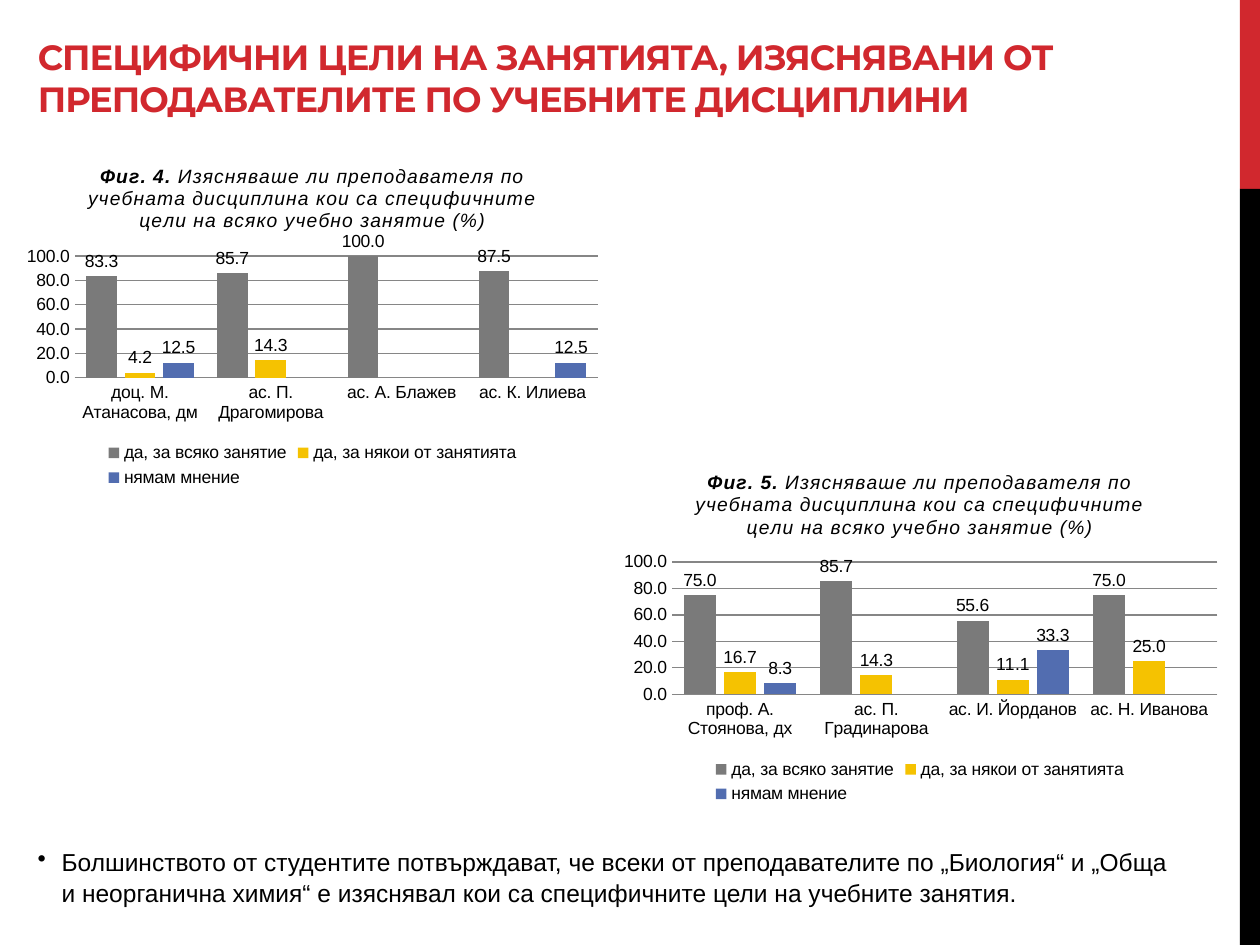
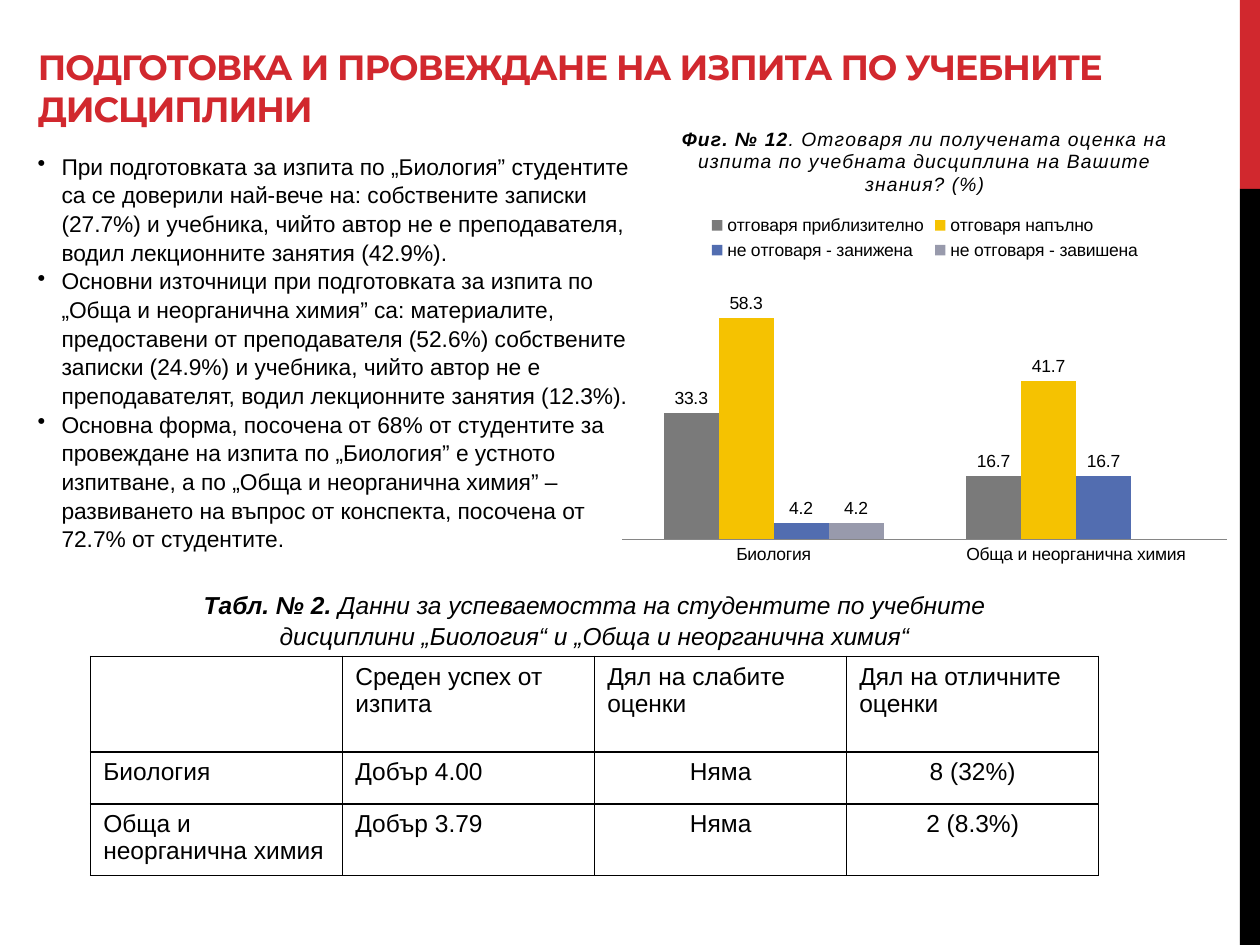
import lxml.etree
import pptx
import pptx.chart.data
import pptx.dml.color
import pptx.enum.chart
import pptx.enum.shapes
import pptx.enum.text
import pptx.oxml
import pptx.oxml.ns
import pptx.util
from pptx.util import Inches, Pt

RED, BLACK, GRID = "D1282E", "000000", "868686"
SERIES_COLOURS = ["7A7A7A", "F5C201", "526DB0", "989AAC"]
BODY_FONT, TITLE_FONT = "Arial", "Montserrat"
NUMBER_FORMAT = "0.0;[Red]0.0"
ALIGN = pptx.enum.text.PP_ALIGN
qn = pptx.oxml.ns.qn


def colour(hex_string):
    return pptx.dml.color.RGBColor.from_string(hex_string)


def add_run(paragraph, text, size, font=BODY_FONT, fill=BLACK, bold=False, italic=False, spacing=0):
    run = paragraph.add_run()
    run.text = text
    run.font.size, run.font.name = Pt(size), font
    run.font.bold, run.font.italic = bold, italic
    run.font.color.rgb = colour(fill)
    if spacing:
        run._r.get_or_add_rPr().set("spc", str(int(spacing * 100)))


presentation = pptx.Presentation()
presentation.slide_width, presentation.slide_height = Inches(10), Inches(7.5)

# Slides: side bands, title and bulleted text
pages = [
    {
        "title": "СПЕЦИФИЧНИ ЦЕЛИ НА ЗАНЯТИЯТА, ИЗЯСНЯВАНИ ОТ ПРЕПОДАВАТЕЛИТЕ ПО УЧЕБНИТЕ ДИСЦИПЛИНИ",
        "title_box": (0.2, 0.21, 9.53, 0.79),
        "body_box": (0.2, 6.66, 9.29, 0.63),
        "size": 14,
        "bullets": [
            "Болшинството от студентите потвърждават, че всеки от преподавателите по „Биология“ "
            "и „Обща и неорганична химия“ е изяснявал кои са специфичните цели на учебните занятия.",
        ],
    },
    {
        "title": "ПОДГОТОВКА И ПРОВЕЖДАНЕ НА ИЗПИТА ПО УЧЕБНИТЕ ДИСЦИПЛИНИ",
        "title_box": (0.2, 0.21, 9.61, 0.87),
        "body_box": (0.2, 1.15, 4.96, 3.39),
        "size": 13,
        "bullets": [
            "При подготовката за изпита по „Биология” студентите са се доверили най-вече на: "
            "собствените записки (27.7%) и учебника, чийто автор не е преподавателя, "
            "водил лекционните занятия (42.9%).",
            "Основни източници при подготовката за изпита по „Обща и неорганична химия” са: "
            "материалите, предоставени от преподавателя (52.6%) собствените записки (24.9%) "
            "и учебника, чийто автор не е преподавателят, водил лекционните занятия (12.3%).",
            "Основна форма, посочена от 68% от студентите за провеждане на изпита по „Биология” "
            "е устното изпитване, а по „Обща и неорганична химия” – развиването на въпрос "
            "от конспекта, посочена от 72.7% от студентите.",
        ],
    },
]
slides = []
for page in pages:
    slide = presentation.slides.add_slide(presentation.slide_layouts[5])
    slides.append(slide)
    for top, height, fill in [(0, 1.5, RED), (1.5, 6, BLACK)]:
        band = slide.shapes.add_shape(
            pptx.enum.shapes.MSO_SHAPE.RECTANGLE,
            Inches(9.84), Inches(top), Inches(0.16), Inches(height))
        band.shadow.inherit = False
        band.fill.solid()
        band.fill.fore_color.rgb = colour(fill)
        band.line.fill.background()

    title = slide.shapes.title
    title.left, title.top, title.width, title.height = map(Inches, page["title_box"])
    title.text_frame.word_wrap = True
    title.text_frame.auto_size = pptx.enum.text.MSO_AUTO_SIZE.NONE
    title.text_frame.vertical_anchor = pptx.enum.text.MSO_ANCHOR.BOTTOM
    paragraph = title.text_frame.paragraphs[0]
    paragraph.alignment = ALIGN.LEFT
    add_run(paragraph, page["title"], 20, TITLE_FONT, RED, bold=True, spacing=-0.6)

    body = slide.shapes.add_textbox(*map(Inches, page["body_box"])).text_frame
    body.word_wrap = True
    for index, text in enumerate(page["bullets"]):
        paragraph = body.add_paragraph() if index else body.paragraphs[0]
        paragraph.line_spacing = 1.05
        properties = paragraph._p.get_or_add_pPr()
        properties.set("marL", str(Inches(0.19)))
        properties.set("indent", str(Inches(-0.19)))
        lxml.etree.SubElement(properties, qn("a:buChar")).set("char", "•")
        add_run(paragraph, text, page["size"])

# Results table and its caption
results_slide = slides[1]
caption = results_slide.shapes.add_textbox(
    Inches(0.98), Inches(4.62), Inches(7.48), Inches(0.57)).text_frame
caption.word_wrap = True
paragraph = caption.paragraphs[0]
paragraph.alignment = ALIGN.CENTER
paragraph.line_spacing = 1.05
add_run(paragraph, "Табл. № 2.", 14, bold=True, italic=True)
add_run(paragraph, " Данни за успеваемостта на студентите по учебните дисциплини "
        "„Биология“ и „Обща и неорганична химия“", 14, italic=True)

results = [
    ["", "Среден успех от изпита", "Дял на слабите оценки", "Дял на отличните оценки"],
    ["Биология", "Добър 4.00", "Няма", "8 (32%)"],
    ["Обща и неорганична химия", "Добър 3.79", "Няма", "2 (8.3%)"],
]
row_heights = [0.76, 0.41, 0.53]
table = results_slide.shapes.add_table(
    3, 4, Inches(0.72), Inches(5.21), Inches(8), Inches(sum(row_heights))).table
table.first_row = table.horz_banding = False
for row_index, row in enumerate(results):
    table.rows[row_index].height = Inches(row_heights[row_index])
    for column_index, text in enumerate(row):
        cell = table.cell(row_index, column_index)
        cell.fill.background()
        for position, side in enumerate(["lnL", "lnR", "lnT", "lnB"]):
            border = pptx.oxml.parse_xml(
                f'<a:{side} {pptx.oxml.ns.nsdecls("a")} w="{Pt(1)}"><a:solidFill>'
                f'<a:srgbClr val="{BLACK}"/></a:solidFill></a:{side}>')
            cell._tc.get_or_add_tcPr().insert(position, border)
        if text:
            paragraph = cell.text_frame.paragraphs[0]
            centred = row_index > 0 and column_index > 1
            paragraph.alignment = ALIGN.CENTER if centred else ALIGN.LEFT
            add_run(paragraph, text, 14)

# Charts: plot is left, top, width and height as shares of the chart
goals_question = (" Изясняваше ли преподавателя по учебната дисциплина "
                  "кои са специфичните цели на всяко учебно занятие (%)")
goals_answers = ["да, за всяко занятие", "да, за някои от занятията", "нямам мнение"]
LEGEND = pptx.enum.chart.XL_LEGEND_POSITION
goals_style = {"slide": slides[0], "question": goals_question, "answers": goals_answers,
               "gap": 75, "overlap": -25, "maximum": 100, "axis": True, "legend": LEGEND.BOTTOM}
charts = [
    {
        **goals_style,
        "box": (0.12, 1.15, 4.72, 2.76), "plot": (0.1, 0.32, 0.88, 0.35),
        "figure": "Фиг. 4.",
        "categories": ["доц. М. Атанасова, дм", "ас. П. Драгомирова", "ас. А. Блажев", "ас. К. Илиева"],
        "values": [[83.3, 85.7, 100, 87.5], [4.2, 14.3, None, None], [12.5, None, None, 12.5]],
    },
    {
        **goals_style,
        "box": (4.84, 3.58, 4.92, 2.84), "plot": (0.1, 0.31, 0.88, 0.37),
        "figure": "Фиг. 5.",
        "categories": ["проф. А. Стоянова, дх", "ас. П. Градинарова", "ас. И. Йорданов", "ас. Н. Иванова"],
        "values": [[75, 85.7, 55.6, 75], [16.7, 14.3, 11.1, 25], [8.3, None, 33.3, None]],
    },
    {
        "slide": results_slide, "box": (4.84, 0.84, 5, 3.7), "plot": (0.02, 0.36, 0.96, 0.57),
        "figure": "Фиг. № 12",
        "question": ". Отговаря ли получената оценка на изпита по учебната дисциплина "
                    "на Вашите знания? (%)",
        "answers": ["отговаря приблизително", "отговаря напълно",
                    "не отговаря - занижена", "не отговаря - завишена"],
        "categories": ["Биология", "Обща и неорганична химия"],
        "values": [[33.3, 16.7], [58.3, 41.7], [4.2, 16.7], [4.2, None]],
        "gap": 150, "overlap": 0, "maximum": 70, "axis": False, "legend": LEGEND.TOP,
    },
]
for item in charts:
    data = pptx.chart.data.CategoryChartData(number_format="0.0")
    data.categories = item["categories"]
    for answer, values in zip(item["answers"], item["values"]):
        data.add_series(answer, values)
    chart = item["slide"].shapes.add_chart(
        pptx.enum.chart.XL_CHART_TYPE.COLUMN_CLUSTERED, *map(Inches, item["box"]), data).chart
    chart.font.size, chart.font.name = Pt(10), BODY_FONT
    chart.font.color.rgb = colour(BLACK)

    paragraph = chart.chart_title.text_frame.paragraphs[0]
    add_run(paragraph, item["figure"], 11, bold=True, italic=True, spacing=0.5)
    add_run(paragraph, item["question"], 11, italic=True, spacing=0.5)
    chart.chart_title.include_in_layout = False
    chart.has_legend = True
    chart.legend.position = item["legend"]
    chart.legend.include_in_layout = False

    # Columns and value labels
    plot = chart.plots[0]
    plot.gap_width, plot.overlap = item["gap"], item["overlap"]
    plot.vary_by_categories = False
    for series, fill in zip(plot.series, SERIES_COLOURS):
        series.format.fill.solid()
        series.format.fill.fore_color.rgb = colour(fill)
        series.invert_if_negative = False
        labels = series.data_labels
        labels.show_value = True
        labels.number_format, labels.number_format_is_linked = NUMBER_FORMAT, False
        labels.position = pptx.enum.chart.XL_LABEL_POSITION.OUTSIDE_END

    # Axes
    category_axis, value_axis = chart.category_axis, chart.value_axis
    for axis in (category_axis, value_axis):
        axis.major_tick_mark = pptx.enum.chart.XL_TICK_MARK.NONE
    category_axis.format.line.color.rgb = colour(GRID)
    value_axis.minimum_scale, value_axis.maximum_scale = 0, item["maximum"]
    value_axis.visible = value_axis.has_major_gridlines = item["axis"]
    if item["axis"]:
        value_axis.major_unit = 20
        value_axis.format.line.fill.background()
        value_axis.major_gridlines.format.line.color.rgb = colour(GRID)
        value_axis.tick_labels.number_format = NUMBER_FORMAT
        value_axis.tick_labels.number_format_is_linked = False

    # Fixed plot area
    plot_area = chart._chartSpace.chart.plotArea
    for old_layout in plot_area.findall(qn("c:layout")):
        plot_area.remove(old_layout)
    layout = lxml.etree.Element(qn("c:layout"))
    manual = lxml.etree.SubElement(layout, qn("c:manualLayout"))
    settings = [("layoutTarget", "inner"), ("xMode", "edge"), ("yMode", "edge"),
                *zip("xywh", item["plot"])]
    for name, value in settings:
        lxml.etree.SubElement(manual, qn(f"c:{name}")).set("val", str(value))
    plot_area.insert(0, layout)

presentation.save("out.pptx")
